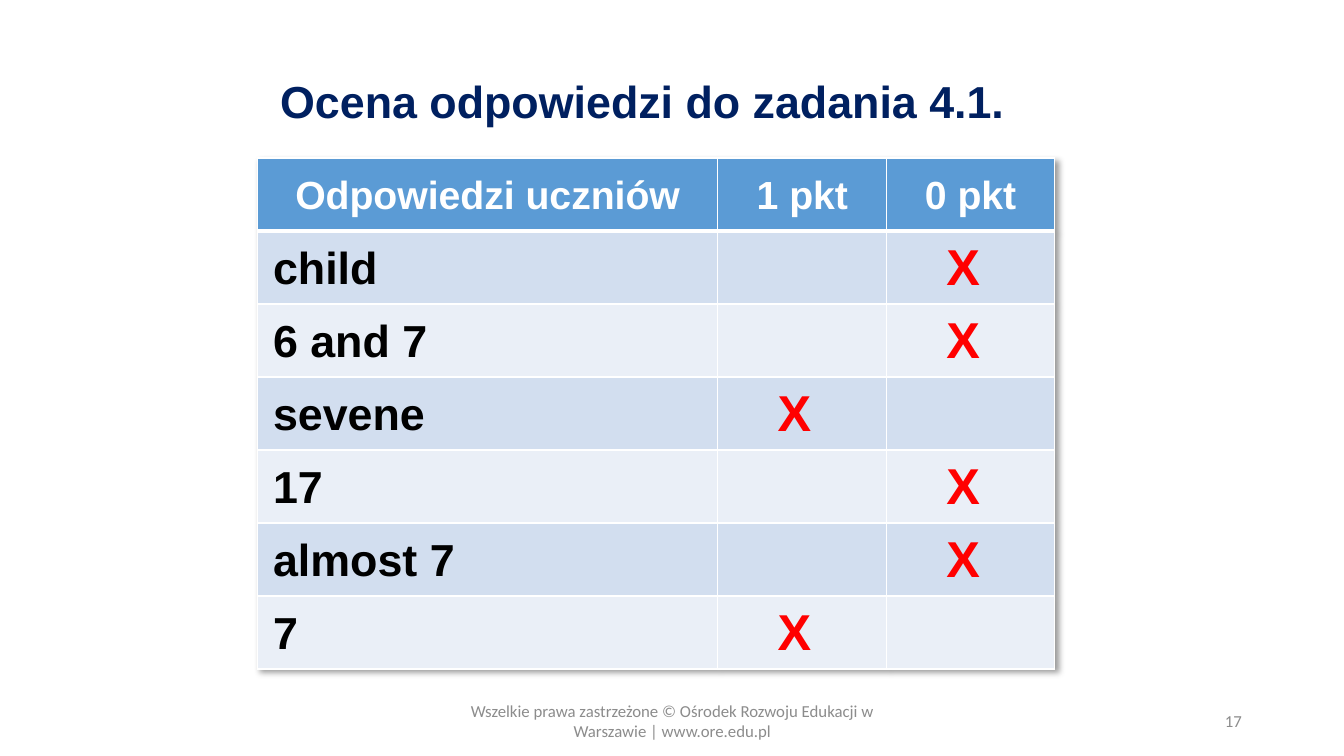
"""Build the slide that scores pupils' answers to task 4.1."""
from dataclasses import dataclass

from lxml import etree
from pptx import Presentation
from pptx.dml.color import RGBColor
from pptx.enum.text import MSO_ANCHOR, PP_ALIGN
from pptx.oxml import parse_xml
from pptx.oxml.ns import nsdecls, qn
from pptx.util import Cm, Pt

LEFT, CENTER, RIGHT, JUSTIFY = PP_ALIGN.LEFT, PP_ALIGN.CENTER, PP_ALIGN.RIGHT, PP_ALIGN.JUSTIFY
TOP, MIDDLE = MSO_ANCHOR.TOP, MSO_ANCHOR.MIDDLE


@dataclass(frozen=True)
class Theme:
    heading: str = "Arial"
    body: str = "Calibri"
    navy: str = "002060"
    white: str = "FFFFFF"
    black: str = "000000"
    red: str = "FF0000"
    grey: str = "8C8C8C"
    header: str = "5B9BD5"
    bands: tuple = ("D2DEEF", "EAEFF7")
    title_size: int = 32
    header_size: int = 28
    answer_size: int = 32
    mark_size: int = 36
    footer_size: int = 12


theme = Theme()


def write(tf, text, size, color, font=theme.heading, bold=True, align=LEFT, spacing=1.0):
    """Put one formatted paragraph into a text frame."""
    tf.word_wrap = True
    p = tf.paragraphs[0]
    p.alignment = align
    p.line_spacing = spacing
    r = p.add_run()
    r.text = text
    r.font.name = font
    r.font.size = Pt(size)
    r.font.bold = bold
    r.font.color.rgb = RGBColor.from_string(color)
    return p


prs = Presentation()
prs.slide_width, prs.slide_height = Cm(33.87), Cm(19.05)
s = prs.slides.add_slide(prs.slide_layouts[6])

answers = [("child", 0), ("6 and 7", 0), ("sevene", 1), ("17", 0), ("almost 7", 0), ("7", 1)]
headings = ["Odpowiedzi uczniów", "1 pkt", "0 pkt"]
column_widths = [11.6, 4.26, 4.22]
row_height = 1.84
table_left, table_top = 6.49, 3.98
row_count = len(answers) + 1

frame = s.shapes.add_table(row_count, len(headings), Cm(table_left), Cm(table_top),
                           Cm(sum(column_widths)), Cm(row_height * row_count))
table = frame.table
shadow = parse_xml(
    f'<a:effectLst {nsdecls("a")}><a:outerShdw blurRad="50800" dist="38100" dir="2700000" '
    'algn="tl" rotWithShape="0"><a:srgbClr val="000000"><a:alpha val="40000"/></a:srgbClr>'
    '</a:outerShdw></a:effectLst>')
table._tbl.tblPr.insert(0, shadow)
for column, width in zip(table.columns, column_widths):
    column.width = Cm(width)

for i, row in enumerate(table.rows):
    row.height = Cm(row_height)
    thick_edge = {0: "lnB", 1: "lnT"}.get(i)
    for j, cell in enumerate(row.cells):
        tcPr = cell._tc.get_or_add_tcPr()
        for edge in ("lnL", "lnR", "lnT", "lnB"):
            ln = etree.SubElement(tcPr, qn(f"a:{edge}"), w=str(Pt(3 if edge == thick_edge else 1)))
            fill = etree.SubElement(ln, qn("a:solidFill"))
            etree.SubElement(fill, qn("a:srgbClr"), val=theme.white)
        cell.fill.solid()
        cell.fill.fore_color.rgb = RGBColor.from_string(theme.bands[(i - 1) % 2] if i else theme.header)
        cell.vertical_anchor = MIDDLE
        cell.margin_left = cell.margin_right = Cm(0.19)
        cell.margin_top = cell.margin_bottom = 0
        if i == 0:
            write(cell.text_frame, headings[j], theme.header_size, theme.white, align=CENTER, spacing=1.07)
        elif j == 0:
            p = write(cell.text_frame, answers[i - 1][0], theme.answer_size, theme.black,
                      align=JUSTIFY, spacing=1.07)
            p._p.get_or_add_pPr().set("marL", str(Cm(0.2)))

title = dict(size=theme.title_size, color=theme.navy, spacing=0.9)
footer = dict(size=theme.footer_size, color=theme.grey, font=theme.body, bold=False)
mark = dict(size=theme.mark_size, color=theme.red)
mark_left = {1: 19.35, 0: 23.6}
labels = [
    ("Ocena odpowiedzi do zadania 4.1.", (6.81, 0.79, 19.23, 3.68), MIDDLE, title),
    ("Wszelkie prawa zastrzeżone © Ośrodek Rozwoju Edukacji w Warszawie | www.ore.edu.pl",
     (11.23, 17.66, 11.43, 1.01), MIDDLE, dict(footer, align=CENTER)),
    ("17", (23.93, 17.66, 7.62, 1.01), MIDDLE, dict(footer, align=RIGHT)),
]
for i, (answer, points) in enumerate(answers):
    labels.append(("X", (mark_left[points], 5.8 + i * row_height, 1.27, 1.8), TOP, mark))

for text, box, anchor, style in labels:
    sp = s.shapes.add_textbox(*map(Cm, box))
    sp.text_frame.vertical_anchor = anchor
    write(sp.text_frame, text, **style)

prs.save("out.pptx")
